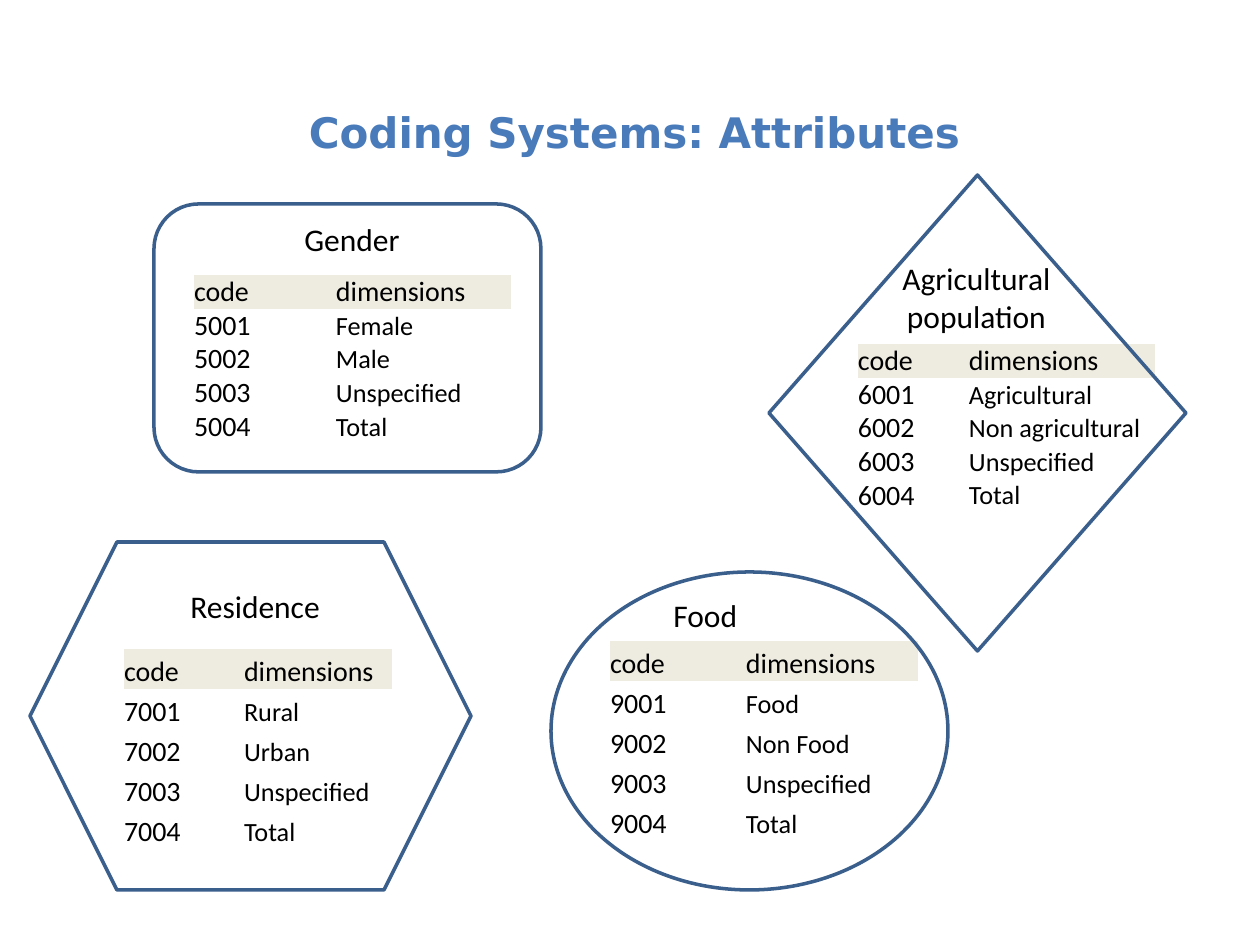
from pptx import Presentation, util as u
from pptx.dml.color import RGBColor
from pptx.enum import shapes, text

PX = 914400 // 126
COLORS = {"title": "497ABA", "outline": "3A5F8C", "header": "EEECE1", "text": "000000"}
NO_STYLE = "{2D5ABB26-0587-4C30-8999-92F81FD0307C}"
HEADER = ("code", "dimensions")
TITLE = ("Coding Systems: Attributes", (44, 96, 1181, 118))
LEFT, CENTER = text.PP_ALIGN.LEFT, text.PP_ALIGN.CENTER
SHAPE = shapes.MSO_SHAPE

GROUPS = [
    {"label": "Gender", "label_box": (292, 214, 122, 50), "align": LEFT, "wrap": False,
     "outline": SHAPE.ROUNDED_RECTANGLE, "outline_box": (154, 204, 387, 268),
     "table_at": (194, 275), "cols": (142, 175), "row": 27,
     "first_code": 5001, "names": ["Female", "Male", "Unspecified", "Total"]},
    {"label": "Agricultural population", "label_box": (887, 253, 179, 89), "align": CENTER, "wrap": True,
     "outline": SHAPE.DIAMOND, "outline_box": (769, 175, 417, 476),
     "table_at": (858, 344), "cols": (111, 186), "row": 27,
     "first_code": 6001, "names": ["Agricultural", "Non agricultural", "Unspecified", "Total"]},
    {"label": "Residence", "label_box": (178, 581, 189, 50), "align": LEFT, "wrap": True,
     "outline": SHAPE.HEXAGON, "outline_box": (30, 542, 441, 348),
     "table_at": (124, 649), "cols": (120, 148), "row": 40,
     "first_code": 7001, "names": ["Rural", "Urban", "Unspecified", "Total"]},
    {"label": "Food", "label_box": (661, 590, 89, 50), "align": LEFT, "wrap": False,
     "outline": SHAPE.OVAL, "outline_box": (551, 572, 397, 318),
     "table_at": (610, 641), "cols": (136, 172), "row": 40,
     "first_code": 9001, "names": ["Food", "Non Food", "Unspecified", "Total"]},
]


def rgb(name):
    return RGBColor.from_string(COLORS[name])


def px(values):
    return [v * PX for v in values]


def write(tf, words, size, color="text", font="Calibri", bold=False, align=LEFT):
    p = tf.paragraphs[0]
    p.alignment = align
    r = p.add_run()
    r.text = words
    for key, value in {"name": font, "size": u.Pt(size), "bold": bold}.items():
        setattr(r.font, key, value)
    r.font.color.rgb = rgb(color)


def add_text(s, words, box, size, wrap=True, top=6, **style):
    tf = s.shapes.add_textbox(*px(box)).text_frame
    tf.word_wrap = wrap
    tf.margin_top = top * PX
    write(tf, words, size, **style)


def add_outline(s, kind, box):
    sp = s.shapes.add_shape(kind, *px(box))
    sp.shadow.inherit = False
    sp.fill.background()
    sp.line.color.rgb = rgb("outline")
    sp.line.width = u.Pt(2)


def add_codes(s, group):
    rows = [HEADER] + [(str(code), name) for code, name in enumerate(group["names"], group["first_code"])]
    cols, height = group["cols"], group["row"]
    box = (*group["table_at"], sum(cols), height * len(rows))
    table = s.shapes.add_table(len(rows), len(cols), *px(box)).table
    table.first_row = table.horz_banding = False
    table._tbl.tblPr[0].text = NO_STYLE
    for col, width in zip(table.columns, cols):
        col.width = width * PX
    for i, row in enumerate(rows):
        table.rows[i].height = height * PX
        for j, words in enumerate(row):
            cell = table.cell(i, j)
            for side in ("left", "top", "right", "bottom"):
                setattr(cell, f"margin_{side}", 0)
            cell.vertical_anchor = text.MSO_ANCHOR.BOTTOM
            if i == 0:
                cell.fill.solid()
                cell.fill.fore_color.rgb = rgb("header")
            else:
                cell.fill.background()
            write(cell.text_frame, words, 15 if i and j else 16)


def main():
    prs = Presentation()
    prs.slide_width, prs.slide_height = px((1260, 945))
    s = prs.slides.add_slide(prs.slide_layouts[6])
    add_text(s, *TITLE, 24, top=10, color="title", font="DejaVu Sans", bold=True, align=CENTER)
    for group in GROUPS:
        add_text(s, group["label"], group["label_box"], 18, wrap=group["wrap"], align=group["align"])
        add_codes(s, group)
        add_outline(s, group["outline"], group["outline_box"])
    prs.save("out.pptx")


if __name__ == "__main__":
    main()
